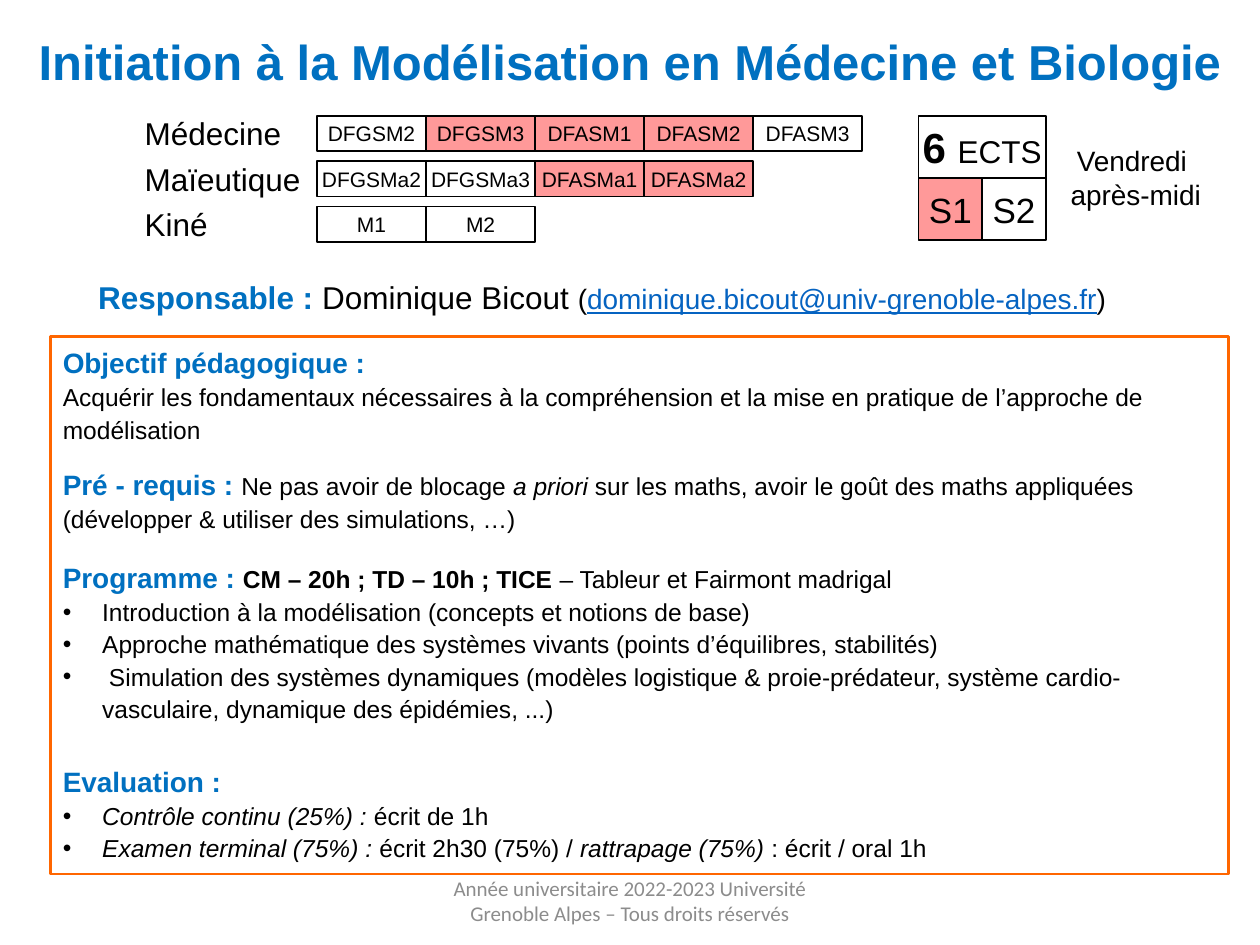
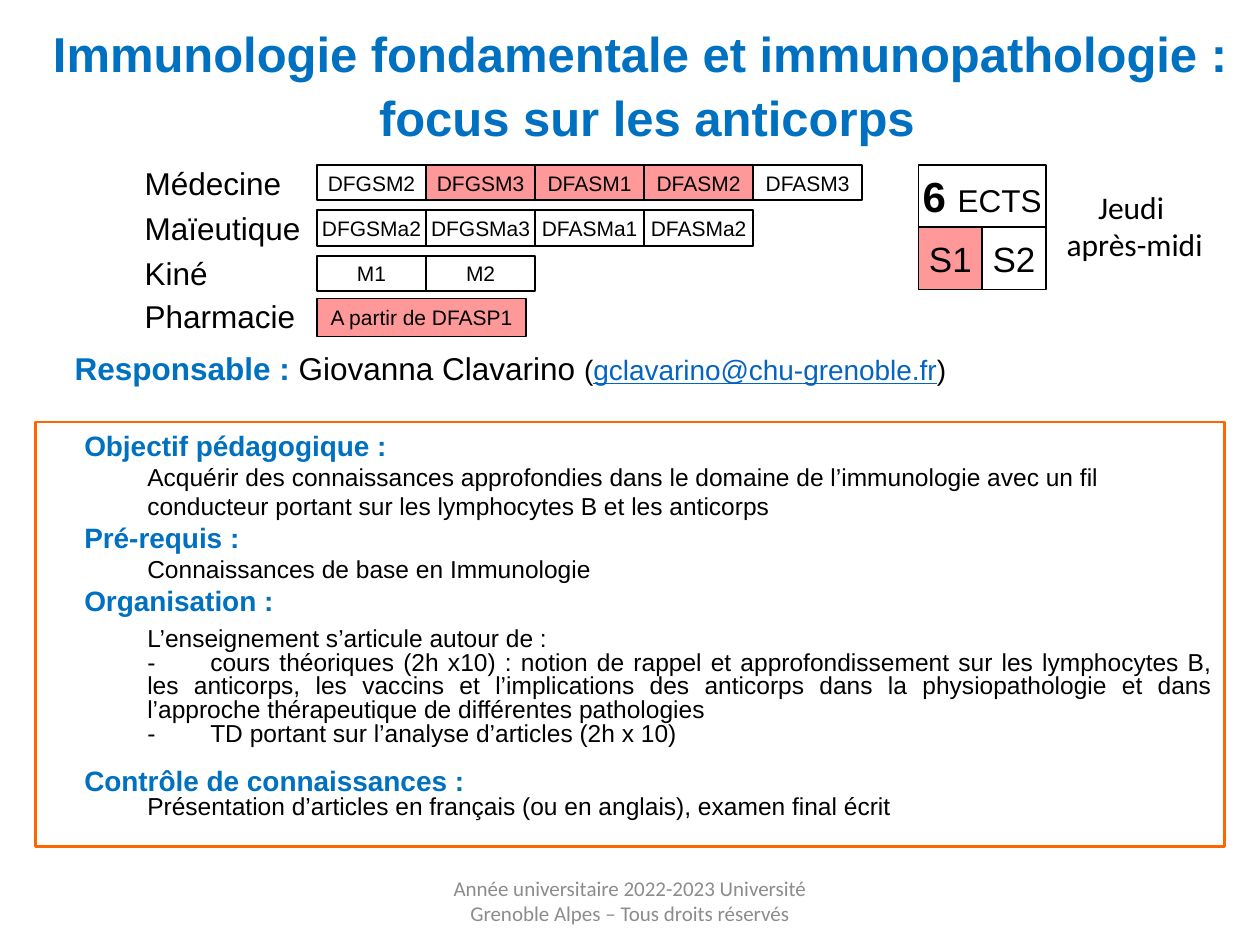
from dataclasses import dataclass

from lxml import etree
from pptx import Presentation
from pptx.dml.color import RGBColor
from pptx.enum.shapes import MSO_SHAPE
from pptx.enum.text import MSO_ANCHOR, PP_ALIGN
from pptx.oxml.ns import qn
from pptx.util import Pt

RECTANGLE = MSO_SHAPE.RECTANGLE
TOP, MIDDLE = MSO_ANCHOR.TOP, MSO_ANCHOR.MIDDLE
LEFT, CENTER, JUSTIFY = PP_ALIGN.LEFT, PP_ALIGN.CENTER, PP_ALIGN.JUSTIFY

BLUE = RGBColor(0x00, 0x70, 0xC0)
LINK_BLUE = RGBColor(0x05, 0x63, 0xC1)
ORANGE = RGBColor(0xFF, 0x66, 0x00)
PINK = RGBColor(0xFF, 0x99, 0x99)
GREY = RGBColor(0x8C, 0x8C, 0x8C)
BLACK = RGBColor(0, 0, 0)
WHITE = RGBColor(0xFF, 0xFF, 0xFF)

# Run styles
TITLE = dict(size=28, color=BLUE, bold=True)
HEADING = dict(size=16, color=BLUE, bold=True)
PLAIN = dict(size=14)
BOLD = dict(size=14, bold=True)
ITALIC = dict(size=14, italic=True)
LABEL = dict(size=18)
CELL = dict(size=12)
SEMESTER = dict(size=20)
FOOTER = dict(size=12, color=GREY, font="Calibri")

# Level grid
LABEL_LEFT, GRID_LEFT = 75.6, 181.2
CELL_WIDTH, CELL_HEIGHT, ROW_PITCH = 62.3, 20.2, 25.9
LEVELS = [
    ("Médecine", ["DFGSM2", "DFGSM3", "DFASM1", "DFASM2", "DFASM3"]),
    ("Maïeutique", ["DFGSMa2", "DFGSMa3", "DFASMa1", "DFASMa2"]),
    ("Kiné", ["M1", "M2"]),
]


@dataclass
class Line:
    """One paragraph: its runs as (text, style) pairs, and its layout."""
    runs: list
    align: int = LEFT
    before: float = 0
    spacing: float = 1.0
    indent: float = 0
    bullet: bool = False
    tab: float = 0


def style_run(run, size, color=BLACK, font="Arial", bold=False, italic=False, underline=False):
    run.font.size = Pt(size)
    run.font.color.rgb = color
    run.font.name = font
    run.font.bold = bold
    run.font.italic = italic
    run.font.underline = underline


def write_lines(text_frame, lines):
    for index, line in enumerate(lines):
        paragraph = text_frame.add_paragraph() if index else text_frame.paragraphs[0]
        paragraph.alignment = line.align
        paragraph.space_before = Pt(line.before)
        paragraph.line_spacing = line.spacing
        for text, style in line.runs:
            run = paragraph.add_run()
            run.text = text
            style_run(run, **style)
        properties = paragraph._p.get_or_add_pPr()
        properties.set("marL", str(Pt(line.indent)))
        properties.set("indent", str(-Pt(line.indent) if line.bullet else 0))
        if line.bullet:
            etree.SubElement(properties, qn("a:buFont"), typeface="Arial")
            etree.SubElement(properties, qn("a:buChar"), char="•")
        if line.tab:
            tabs = etree.SubElement(properties, qn("a:tabLst"))
            etree.SubElement(tabs, qn("a:tab"), pos=str(Pt(line.tab)), algn="l")


def add_text(slide, box, lines, anchor=TOP, wrap=True):
    shape = slide.shapes.add_textbox(*map(Pt, box))
    shape.text_frame.word_wrap = wrap
    shape.text_frame.vertical_anchor = anchor
    write_lines(shape.text_frame, lines)


def add_box(slide, box, lines, fill=None, line_color=BLACK, line_width=1,
            anchor=MIDDLE, margin=0):
    shape = slide.shapes.add_shape(RECTANGLE, *map(Pt, box))
    shape.shadow.inherit = False
    if fill is None:
        shape.fill.background()
    else:
        shape.fill.solid()
        shape.fill.fore_color.rgb = fill
    shape.line.color.rgb = line_color
    shape.line.width = Pt(line_width)
    frame = shape.text_frame
    frame.word_wrap = True
    frame.vertical_anchor = anchor
    frame.margin_left = frame.margin_right = Pt(margin)
    frame.margin_top = frame.margin_bottom = Pt(margin / 2)
    write_lines(frame, lines)


def add_title(slide, box, texts):
    add_text(slide, box, [Line([(text, TITLE)], CENTER, before=3) for text in texts])


def add_footer(slide):
    text = "Année universitaire 2022-2023 Université Grenoble Alpes – Tous droits réservés"
    add_text(slide, (238.3, 500.4, 243.4, 28.8), [Line([(text, FOOTER)], CENTER)], MIDDLE)


def add_level_row(slide, top, label, names, open_levels,
                  width=CELL_WIDTH, height=CELL_HEIGHT, line_width=1):
    """A row label followed by its cells; the open levels are pink."""
    add_text(slide, (LABEL_LEFT, top - 4.3, 104, 28.8), [Line([(label, LABEL)])], wrap=False)
    for column, name in enumerate(names):
        add_box(slide, (GRID_LEFT + column * width, top, width, height),
                [Line([(name, CELL)], CENTER)],
                PINK if name in open_levels else WHITE, line_width=line_width)


def add_level_grid(slide, top, open_levels):
    for row, (label, names) in enumerate(LEVELS):
        add_level_row(slide, top + row * ROW_PITCH, label, names, open_levels)


def add_credits(slide, top, left=524.9, width=72.8, height=35.6):
    """Credits above the two semesters, the first one chosen."""
    half = width / 2
    credits = Line([("6 ", dict(size=24, bold=True)), ("ECTS", LABEL)], CENTER)
    add_box(slide, (left, top, width, height), [credits])
    for column, (name, fill) in enumerate([("S1", PINK), ("S2", WHITE)]):
        add_box(slide, (left + column * half, top + height, half, height),
                [Line([(name, SEMESTER)], CENTER)], fill)


def add_schedule(slide, box, day, style):
    add_text(slide, box, [Line([(text, style)], CENTER) for text in (day, "après-midi")])


def add_contact(slide, left, top, name, address):
    add_text(slide, (left, top, 640, 28.8), [Line([
        ("Responsable : ", dict(size=18, color=BLUE, bold=True)),
        (name + " ", LABEL),
        ("(", dict(size=16)),
        (address, dict(size=16, color=LINK_BLUE, underline=True)),
        (")", dict(size=16)),
    ])])


def add_description(slide, box, lines):
    add_box(slide, box, lines, line_color=ORANGE, line_width=1.5, anchor=TOP, margin=7.2)


def build_modelling_slide(slide):
    add_title(slide, (0, 14.4, 720, 41), ["Initiation à la Modélisation en Médecine et Biologie"])

    # Description
    def text(*runs, before=0):
        return Line(list(runs), before=before, spacing=1.1)

    def bullet(*runs):
        return Line(list(runs), spacing=1.1, indent=22.5, bullet=True)

    add_description(slide, (28.8, 192.2, 673.2, 307.4), [
        text(("Objectif pédagogique :", HEADING)),
        text(("Acquérir les fondamentaux nécessaires à la compréhension et la mise en "
              "pratique de l’approche de modélisation", PLAIN)),
        text(("Pré - requis : ", HEADING), ("Ne pas avoir de blocage ", PLAIN),
             ("a priori", ITALIC),
             (" sur les maths, avoir le goût des maths appliquées "
              "(développer & utiliser des simulations, …)", PLAIN), before=11.4),
        text(("Programme : ", HEADING), ("CM – 20h ; TD – 10h ; TICE ", BOLD),
             ("– Tableur et Fairmont madrigal", PLAIN), before=13.6),
        bullet(("Introduction à la modélisation (concepts et notions de base)", PLAIN)),
        bullet(("Approche mathématique des systèmes vivants "
                "(points d’équilibres, stabilités)", PLAIN)),
        bullet((" Simulation des systèmes dynamiques (modèles logistique & proie-prédateur, "
                "système cardio-vasculaire, dynamique des épidémies, ...)", PLAIN)),
        text(("Evaluation :", HEADING), before=21.5),
        bullet(("Contrôle continu (25%) :", ITALIC), (" écrit de 1h", PLAIN)),
        bullet(("Examen terminal (75%) :", ITALIC), (" écrit 2h30 (75%) / ", PLAIN),
               ("rattrapage (75%)", ITALIC), (" : écrit / oral 1h", PLAIN)),
    ])
    add_footer(slide)

    # Audience and timing
    top = 66.2
    add_level_grid(slide, top, {"DFGSM3", "DFASM1", "DFASM2", "DFASMa1", "DFASMa2"})
    add_credits(slide, top)
    add_schedule(slide, (600, 78.5, 98, 46), "Vendredi ", dict(size=16))
    add_contact(slide, 49, 155.5, "Dominique Bicout", "dominique.bicout@univ-grenoble-alpes.fr")


def build_immunology_slide(slide):
    add_title(slide, (19.4, 10, 700.6, 78.5),
              ["Immunologie fondamentale et immunopathologie : ", "focus sur les anticorps"])

    # Description
    def heading(text, **layout):
        return Line([(text, HEADING)], indent=20.9, **layout)

    def detail(text, **layout):
        return Line([(text, PLAIN)], indent=56.9, **layout)

    tight = dict(align=JUSTIFY, spacing=0.8, tab=36)
    add_description(slide, (20.2, 241.2, 679.7, 242.6), [
        heading("Objectif pédagogique :"),
        detail("Acquérir des connaissances approfondies dans le domaine de l’immunologie avec "
               "un fil conducteur portant sur les lymphocytes B et les anticorps"),
        heading("Pré-requis :"),
        detail("Connaissances de base en Immunologie"),
        heading("Organisation :"),
        detail("L’enseignement s’articule autour de :", align=JUSTIFY, before=3.4),
        detail("-\tcours théoriques (2h x10) : notion de rappel et approfondissement sur les "
               "lymphocytes B, les anticorps, les vaccins et l’implications des anticorps dans "
               "la physiopathologie et dans l’approche thérapeutique de différentes pathologies",
               **tight),
        detail("-\tTD portant sur l’analyse d’articles (2h x 10)", **tight),
        heading("Contrôle de connaissances :", before=13.4, **tight),
        detail("Présentation d’articles en français (ou en anglais), examen final écrit", **tight),
    ])
    add_footer(slide)

    # Audience and timing
    top = 94.3
    add_level_grid(slide, top, {"DFGSM3", "DFASM1", "DFASM2"})
    pharmacy = "A partir de DFASP1"
    add_level_row(slide, top + 76.3, "Pharmacie", [pharmacy], {pharmacy},
                  width=119.5, height=21.6, line_width=0.75)
    add_credits(slide, top)
    add_schedule(slide, (601.2, 103.7, 94.3, 51), "Jeudi ", dict(size=18, font="Calibri"))
    add_contact(slide, 35.6, 195.8, "Giovanna Clavarino", "gclavarino@chu-grenoble.fr")


def main():
    presentation = Presentation()
    presentation.slide_width, presentation.slide_height = Pt(720), Pt(540)
    blank = presentation.slide_layouts[6]
    for build in (build_modelling_slide, build_immunology_slide):
        build(presentation.slides.add_slide(blank))
    presentation.save("out.pptx")


if __name__ == "__main__":
    main()
